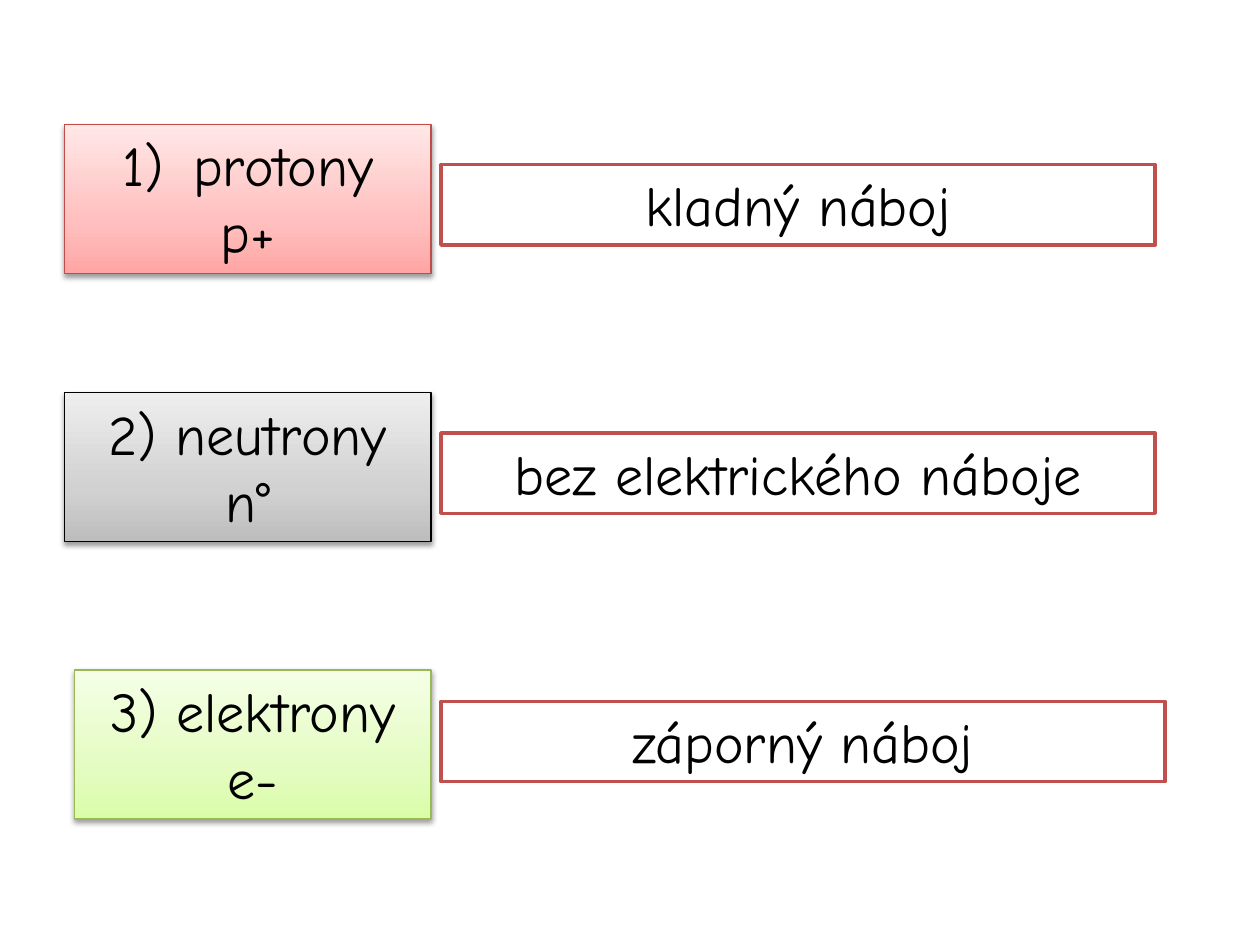
from lxml import etree
from pptx import Presentation
from pptx.dml.color import RGBColor
from pptx.enum import shapes, text
from pptx.oxml import parse_xml
from pptx.oxml.ns import nsdecls, qn
from pptx.util import Cm, Pt

FONT = "Comic Neue"
BLACK, WHITE, RED = "000000", "FFFFFF", "C0504D"
ROW_STEP = 5.41
LABEL_RIGHT, CHARGE_LEFT = 8.69, 8.89

# label paragraphs, gradient from the bottom up, line, left, top, charge, width
PARTICLES = [
    (["protony", "p+"], ["FFA6A5", "FFC0BF", "FFE7E7"], "BF4C48",
     1.3, 2.51, "kladný náboj", 14.4),
    (["2) neutrony n°"], ["BDBDBD", "D1D1D1", "EEEEEE"], BLACK,
     1.3, 7.92, "bez elektrického náboje", 14.4),
    (["3) elektrony e-"], ["DAFDA7", "E4FCC2", "F5FFE7"], "98B955",
     1.5, 13.51, "záporný náboj", 14.6),
]


def rgb(value):
    return RGBColor.from_string(value)


def add_box(s, left, top, width, height, line, line_width):
    sp = s.shapes.add_shape(shapes.MSO_SHAPE.RECTANGLE,
                            Cm(left), Cm(top), Cm(width), Cm(height))
    sp.shadow.inherit = False
    sp.fill.solid()
    sp.fill.fore_color.rgb = rgb(WHITE)
    sp.line.color.rgb = rgb(line)
    sp.line.width = Pt(line_width)
    return sp


def write(sp, paragraphs, size=32, color=BLACK, font=FONT):
    tf = sp.text_frame
    tf.word_wrap = True
    tf.auto_size = text.MSO_AUTO_SIZE.SHAPE_TO_FIT_TEXT
    tf.vertical_anchor = text.MSO_ANCHOR.TOP
    for i, line in enumerate(paragraphs):
        p = tf.paragraphs[0] if i == 0 else tf.add_paragraph()
        p.alignment = text.PP_ALIGN.CENTER
        r = p.add_run()
        r.text = line
        r.font.name = font
        r.font.size = Pt(size)
        r.font.color.rgb = rgb(color)


def number_list(sp):
    """Number the first paragraph and give all of them a hanging indent."""
    for i, p in enumerate(sp.text_frame.paragraphs):
        props = p._p.get_or_add_pPr()
        props.set("marL", str(Cm(1.43)))
        props.set("indent", str(-Cm(1.43)))
        if i == 0:
            bullet = etree.SubElement(props, qn("a:buAutoNum"))
            bullet.set("type", "arabicParenR")
        else:
            etree.SubElement(props, qn("a:buNone"))


def shade(sp, colors):
    """Fill with a gradient that runs from the bottom to the top."""
    stops = "".join(
        f'<a:gs pos="{pos * 1000}"><a:srgbClr val="{color}"/></a:gs>'
        for pos, color in zip((0, 35, 100), colors))
    props = sp._element.spPr
    props.replace(props.find(qn("a:solidFill")), parse_xml(
        f'<a:gradFill {nsdecls("a")} rotWithShape="1"><a:gsLst>{stops}</a:gsLst>'
        '<a:lin ang="16200000" scaled="0"/></a:gradFill>'))


def drop_shadow(sp):
    effects = sp._element.spPr.find(qn("a:effectLst"))
    effects.append(parse_xml(
        f'<a:outerShdw {nsdecls("a")} blurRad="{Pt(3.1)}" dist="{Pt(1.6)}" '
        'dir="5400000" rotWithShape="0"><a:srgbClr val="000000">'
        '<a:alpha val="38000"/></a:srgbClr></a:outerShdw>'))


def add_label(s, paragraphs, colors, line, left, top):
    sp = add_box(s, left, top, LABEL_RIGHT - left, 3, line, 0.75)
    shade(sp, colors)
    drop_shadow(sp)
    write(sp, paragraphs)
    if len(paragraphs) > 1:
        number_list(sp)


def add_charge(s, row, charge, width):
    sp = add_box(s, CHARGE_LEFT, 3.32 + row * ROW_STEP, width, 1.62, RED, 2)
    write(sp, [charge])


def main():
    prs = Presentation()
    prs.slide_width, prs.slide_height = Cm(25.4), Cm(19.05)
    s = prs.slides.add_slide(prs.slide_layouts[6])
    for row, (label, colors, line, left, top, charge, width) in enumerate(PARTICLES):
        add_label(s, label, colors, line, left, top)
        add_charge(s, row, charge, width)
    prs.save("out.pptx")


if __name__ == "__main__":
    main()
